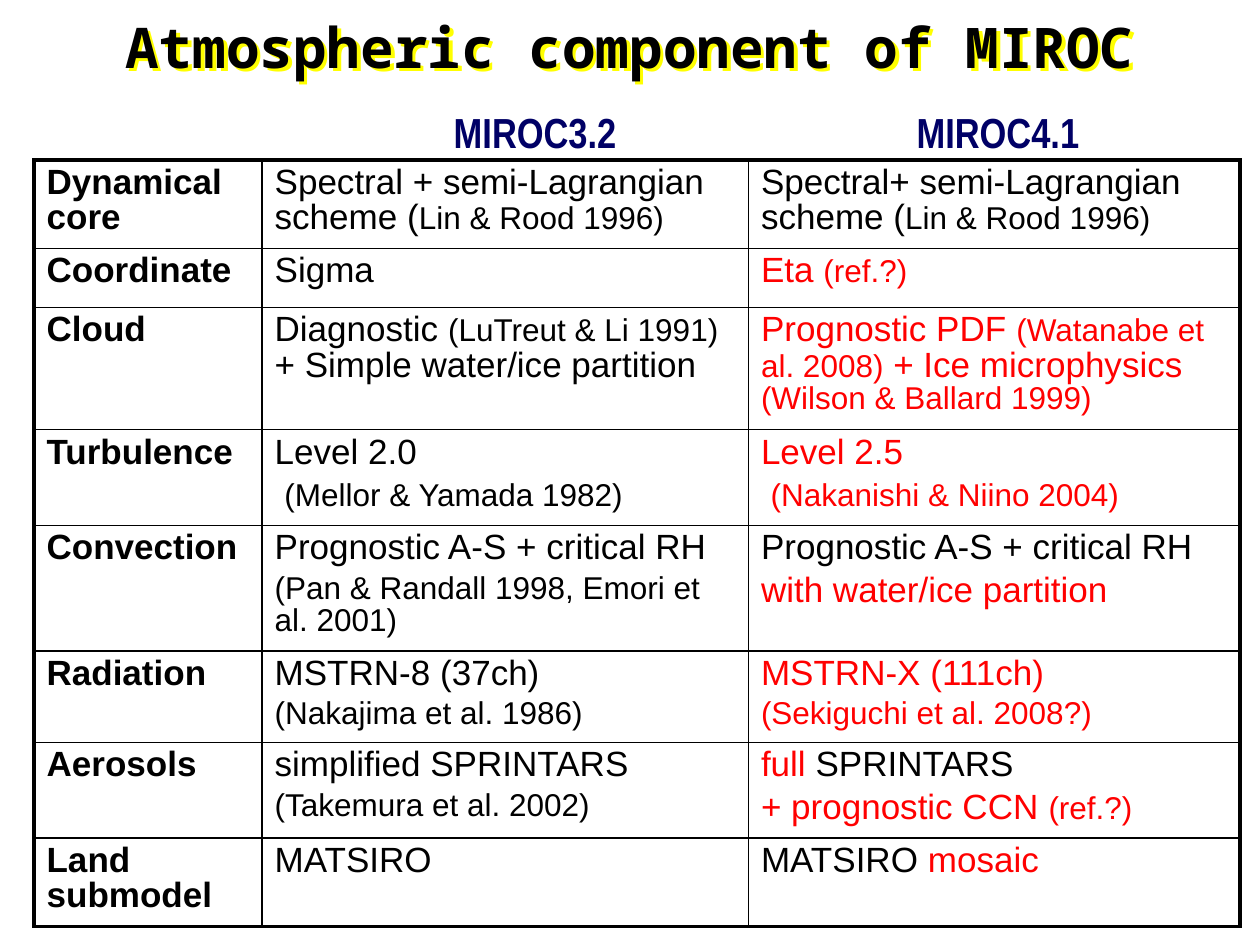
from lxml import etree
from pptx import Presentation
from pptx import util as u
from pptx.dml.color import RGBColor
from pptx.enum import text
from pptx.oxml import parse_xml
from pptx.oxml.ns import nsdecls

COLORS = {"ink": "000000", "new": "FF0000", "heading": "000066", "shadow": "FFFF00"}
STYLES = {
    "label": {"size": 20, "color": "ink", "bold": True},
    "main": {"size": 20, "color": "ink", "bold": False},
    "cite": {"size": 18, "color": "ink", "bold": False},
    "new": {"size": 20, "color": "new", "bold": False},
    "newcite": {"size": 18, "color": "new", "bold": False},
    "heading": {"size": 24, "color": "heading", "bold": True, "name": "Arial Narrow"},
    "title": {"size": 32, "color": "ink", "bold": True, "name": "Noto Sans Mono"},
}
TITLE = "Atmospheric component of MIROC"
HEADINGS = [("MIROC3.2 ", 3.5, 1.57), ("MIROC4.1", 7.17, 1.5)]
COL_WIDTHS = [1.81, 3.86, 3.9]
ROWS = [
    ("Dynamical core", 0.7,
     [[("Spectral + semi-Lagrangian scheme (", "main"), ("Lin & Rood 1996)", "cite")]],
     [[("Spectral+ semi-Lagrangian scheme (", "main"), ("Lin & Rood 1996)", "cite")]]),
    ("Coordinate", 0.47,
     [[("Sigma", "main")]],
     [[("Eta ", "new"), ("(ref.?)", "newcite")]]),
    ("Cloud", 0.97,
     [[("Diagnostic ", "main"), ("(LuTreut & Li 1991)", "cite"),
       (" + Simple water/ice partition", "main")]],
     [[("Prognostic PDF ", "new"), ("(Watanabe et al. 2008)", "newcite"),
       (" + Ice microphysics ", "new"), ("(Wilson & Ballard 1999)", "newcite")]]),
    ("Turbulence", 0.76,
     [[("Level 2.0", "main")], [(" ", "main"), ("(Mellor & Yamada 1982)", "cite")]],
     [[("Level 2.5", "new")], [(" ", "new"), ("(Nakanishi & Niino 2004)", "newcite")]]),
    ("Convection", 0.99,
     [[("Prognostic A-S + critical RH", "main")],
      [("(Pan & Randall 1998, Emori et al. 2001)", "cite")]],
     [[("Prognostic A-S + critical RH", "main")], [("with water/ice partition", "new")]]),
    ("Radiation", 0.72,
     [[("MSTRN-8 (37ch)", "main")], [("(Nakajima et al. 1986)", "cite")]],
     [[("MSTRN-X (111ch)", "new")], [("(Sekiguchi et al. 2008?)", "newcite")]]),
    ("Aerosols", 0.76,
     [[("simplified SPRINTARS", "main")], [("(Takemura et al. 2002)", "cite")]],
     [[("full ", "new"), ("SPRINTARS", "main")],
      [("+ prognostic CCN ", "new"), ("(ref.?)", "newcite")]]),
    ("Land submodel", 0.7,
     [[("MATSIRO", "main")]],
     [[("MATSIRO ", "main"), ("mosaic", "new")]]),
]


def add_run(p, words, style):
    r = p.add_run()
    r.text = words
    values = {"name": "Arial", **STYLES[style]}
    r.font.color.rgb = RGBColor.from_string(COLORS[values.pop("color")])
    values["size"] = u.Pt(values["size"])
    for key, value in values.items():
        setattr(r.font, key, value)


def add_line(tf, words, style):
    p = tf.paragraphs[0]
    p.alignment = text.PP_ALIGN.CENTER
    add_run(p, words, style)


def fill_cell(cell, paragraphs):
    tf = cell.text_frame
    for i, runs in enumerate(paragraphs):
        p = tf.add_paragraph() if i else tf.paragraphs[0]
        p.line_spacing = 0.9
        p.space_before = u.Pt(4 if i else 0)
        for words, style in runs:
            add_run(p, words, style)


def set_borders(cell, outer):
    tc_pr = cell._tc.get_or_add_tcPr()
    for i, side in enumerate("LRTB"):
        width = u.Pt(2.25 if outer[side] else 1)
        tc_pr.insert(i, parse_xml(
            f'<a:ln{side} {nsdecls("a")} w="{width}"><a:solidFill>'
            f'<a:srgbClr val="{COLORS["ink"]}"/></a:solidFill></a:ln{side}>'))


def add_title(s):
    sp = s.shapes.title
    box = {"left": 0.5, "top": 0.05, "width": 9, "height": 0.63}
    for key, value in box.items():
        setattr(sp, key, u.Inches(value))
    tf = sp.text_frame
    tf.auto_size = text.MSO_AUTO_SIZE.NONE
    tf.vertical_anchor = text.MSO_ANCHOR.MIDDLE
    add_line(tf, TITLE, "title")
    sp.fill.background()
    sp._element.spPr.append(parse_xml(
        f'<a:effectLst {nsdecls("a")}><a:outerShdw dist="{u.Inches(0.04)}" dir="2700000" '
        f'algn="ctr" rotWithShape="0"><a:srgbClr val="{COLORS["shadow"]}"/>'
        '</a:outerShdw></a:effectLst>'))


def add_headings(s):
    for words, left, width in HEADINGS:
        sp = s.shapes.add_textbox(*map(u.Inches, (left, 0.8, width, 0.5)))
        tf = sp.text_frame
        tf.word_wrap = False
        tf.auto_size = text.MSO_AUTO_SIZE.SHAPE_TO_FIT_TEXT
        add_line(tf, words, "heading")


def add_comparison(s):
    height = sum(row[1] for row in ROWS)
    frame = s.shapes.add_table(len(ROWS), len(COL_WIDTHS), u.Inches(0.27), u.Inches(1.27),
                               u.Inches(sum(COL_WIDTHS)), u.Inches(height))
    table = frame.table
    table.first_row = table.horz_banding = False
    for column, width in zip(table.columns, COL_WIDTHS):
        column.width = u.Inches(width)
    for i, (label, row_height, old, new) in enumerate(ROWS):
        table.rows[i].height = u.Inches(row_height)
        for j, paragraphs in enumerate(([[(label, "label")]], old, new)):
            cell = table.cell(i, j)
            cell.fill.background()
            fill_cell(cell, paragraphs)
            set_borders(cell, {"L": j == 0, "R": j == len(COL_WIDTHS) - 1,
                               "T": i == 0, "B": i == len(ROWS) - 1})


def main():
    prs = Presentation()
    prs.slide_width, prs.slide_height = u.Inches(10), u.Inches(7.5)
    s = prs.slides.add_slide(prs.slide_layouts[5])
    add_title(s)
    add_headings(s)
    add_comparison(s)
    prs.save("out.pptx")


if __name__ == "__main__":
    main()
